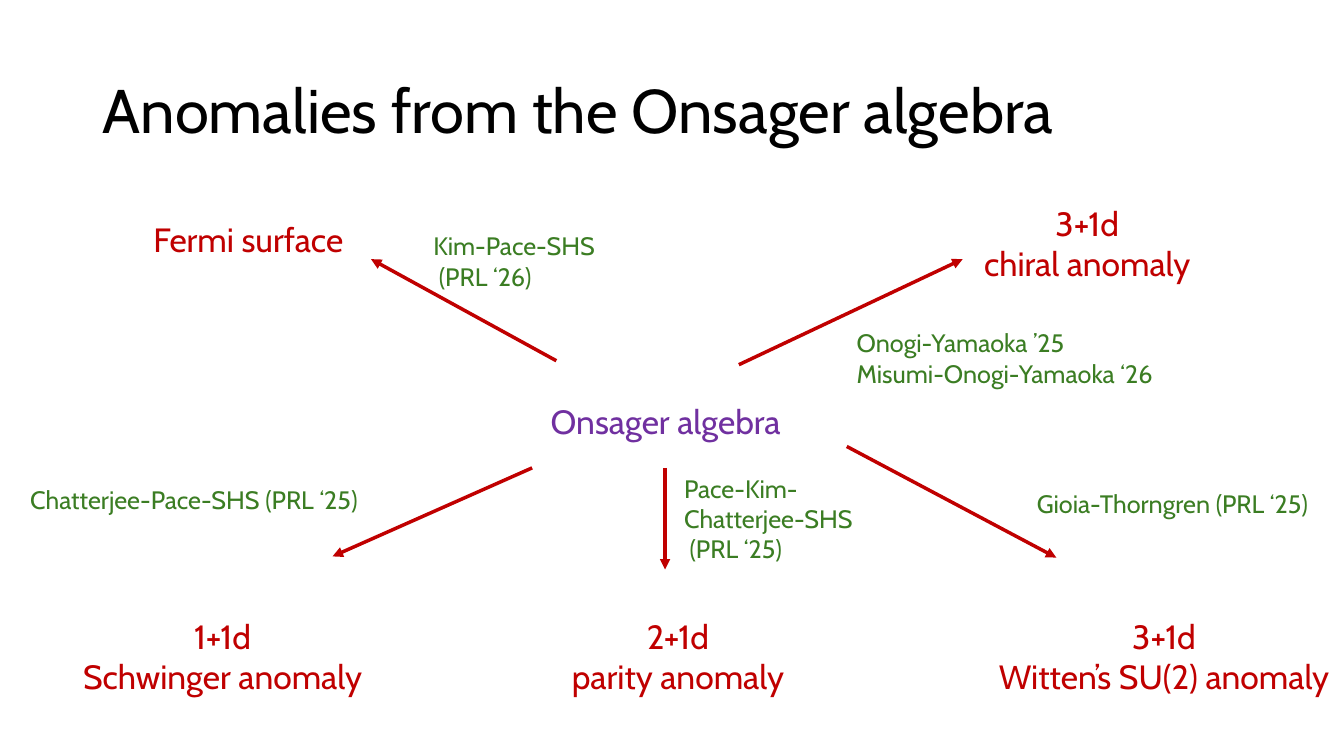
"""Build a slide that maps the Onsager algebra to its anomalies."""
import dataclasses

import lxml.etree
import pptx
import pptx.dml.color
import pptx.enum.shapes
import pptx.enum.text
import pptx.oxml.ns
import pptx.slide
import pptx.util

Cm = pptx.util.Cm
Color = pptx.dml.color.RGBColor
Align = pptx.enum.text.PP_ALIGN
Anchor = pptx.enum.text.MSO_ANCHOR
Fit = pptx.enum.text.MSO_AUTO_SIZE


@dataclasses.dataclass(frozen=True)
class Theme:
    font: str = "Cabin"
    black: str = "000000"
    red: str = "C00000"
    green: str = "3B7D23"
    purple: str = "7030A0"
    head: float = 44
    body: float = 24
    note: float = 18
    line: float = 2.5


@dataclasses.dataclass(frozen=True)
class Label:
    text: str
    left: float
    top: float
    width: float
    height: float
    color: str
    size: float
    align: Align = Align.CENTER
    wrap: bool = False


@dataclasses.dataclass(frozen=True)
class Arrow:
    x: float
    y: float
    to_x: float
    to_y: float


THEME = Theme()
ONE, TWO = 1.27, 2.31
BASE = 15.39

TITLE = Label("Anomalies from the Onsager algebra", 2.34, 1.02, 29.21, 3.68,
              THEME.black, THEME.head, Align.LEFT, True)


def topic(text: str, left: float, top: float, width: float, height: float) -> Label:
    """Describe a red anomaly label."""
    return Label(text, left, top, width, height, THEME.red, THEME.body)


def cite(text: str, left: float, top: float, width: float, height: float,
         wrap: bool = False) -> Label:
    """Describe a green citation."""
    return Label(text, left, top, width, height, THEME.green, THEME.note,
                 Align.LEFT, wrap)


LABELS = [
    Label("Onsager algebra", 13.41, 9.98, 6.73, ONE, THEME.purple, THEME.body),
    topic("Fermi surface", 3.48, 5.38, 5.56, ONE),
    topic("3+1d\nchiral anomaly", 24.43, 4.98, 5.94, TWO),
    topic("1+1d\nSchwinger anomaly", 1.65, BASE, 7.92, TWO),
    topic("2+1d\nparity anomaly", 14.1, BASE, 5.97, TWO),
    topic("3+1d\nWitten’s SU(2) anomaly", 24.79, BASE, 9.09, TWO),
    cite("Kim-Pace-SHS\n (PRL ‘26)", 10.67, 5.69, 5.97, 1.8, True),
    cite("Onogi-Yamaoka ’25\nMisumi-Onogi-Yamaoka ‘26", 21.34, 8.13, 8.08, 1.8),
    cite("Chatterjee-Pace-SHS (PRL ‘25)", 0.51, 12.09, 8.97, 1.02),
    cite("Pace-Kim-Chatterjee-SHS\n (PRL ‘25)", 16.99, 11.79, 5.97, 2.57, True),
    cite("Gioia-Thorngren (PRL ‘25)", 25.88, 12.19, 7.47, 1.02),
]

ARROWS = [
    Arrow(14.02, 9.09, 9.35, 6.53),
    Arrow(18.62, 9.19, 24.26, 6.53),
    Arrow(13.41, 11.79, 8.38, 14.02),
    Arrow(16.76, 11.79, 16.76, 14.35),
    Arrow(21.34, 11.25, 26.62, 14.05),
]


def add_label(slide: pptx.slide.Slide, label: Label) -> pptx.text.text.TextFrame:
    """Draw a label and return its text frame."""
    box = slide.shapes.add_textbox(Cm(label.left), Cm(label.top),
                                   Cm(label.width), Cm(label.height))
    frame = box.text_frame
    frame.word_wrap = label.wrap
    frame.auto_size = Fit.SHAPE_TO_FIT_TEXT
    frame.text = label.text
    for para in frame.paragraphs:
        para.alignment = label.align
        for run in para.runs:
            run.font.name = THEME.font
            run.font.size = pptx.util.Pt(label.size)
            run.font.color.rgb = Color.from_string(label.color)
    return frame


def add_title(slide: pptx.slide.Slide, label: Label) -> None:
    """Draw the title, centred in the height of its box."""
    frame = add_label(slide, label)
    frame.auto_size = Fit.NONE
    frame.vertical_anchor = Anchor.MIDDLE
    frame.paragraphs[0].line_spacing = 0.9


def add_arrow(slide: pptx.slide.Slide, arrow: Arrow) -> None:
    """Draw a straight arrow with a triangle at its end."""
    link = slide.shapes.add_connector(
        pptx.enum.shapes.MSO_CONNECTOR.STRAIGHT,
        Cm(arrow.x), Cm(arrow.y), Cm(arrow.to_x), Cm(arrow.to_y))
    link.line.color.rgb = Color.from_string(THEME.red)
    link.line.width = pptx.util.Pt(THEME.line)
    qn = pptx.oxml.ns.qn
    props = link.element.spPr
    lxml.etree.SubElement(props.find(qn("a:ln")), qn("a:tailEnd"), type="triangle")
    lxml.etree.SubElement(props, qn("a:effectLst"))


def main() -> None:
    """Build and save the slide."""
    deck = pptx.Presentation()
    deck.slide_width, deck.slide_height = Cm(33.87), Cm(19.05)
    slide = deck.slides.add_slide(deck.slide_layouts[6])
    add_title(slide, TITLE)
    for arrow in ARROWS:
        add_arrow(slide, arrow)
    for label in LABELS:
        add_label(slide, label)
    deck.save("out.pptx")


if __name__ == "__main__":
    main()
